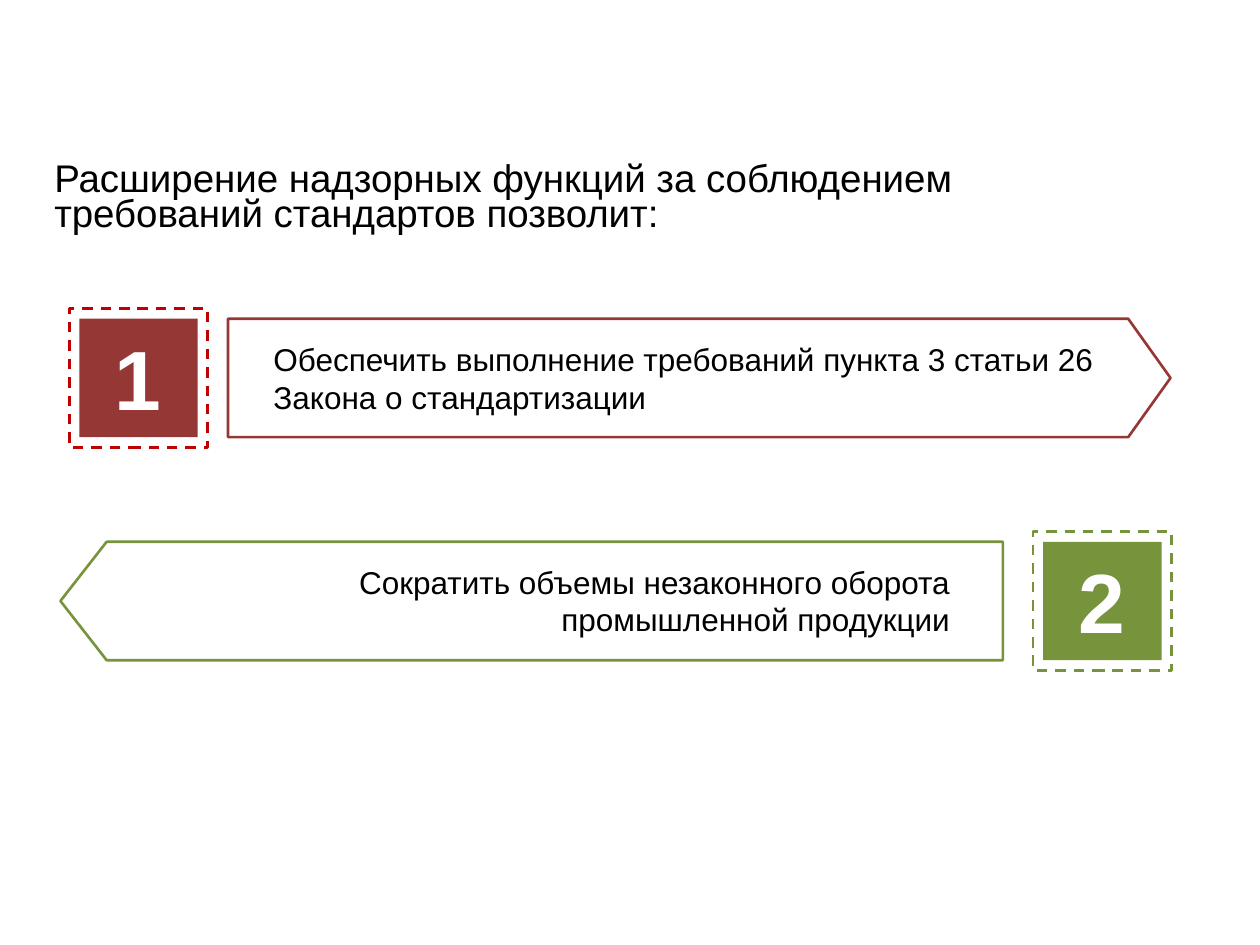
"""Builds a slide with two numbered arrow banners under a heading."""
from dataclasses import dataclass

from pptx import Presentation
from pptx.dml.color import RGBColor
from pptx.enum.dml import MSO_LINE
from pptx.enum.shapes import MSO_SHAPE
from pptx.enum.text import MSO_ANCHOR, PP_ALIGN
from pptx.shapes.autoshape import Shape
from pptx.shapes.group import GroupShape
from pptx.shapes.shapetree import SlideShapes
from pptx.text.text import TextFrame
from pptx.util import Pt


@dataclass(frozen=True)
class Theme:
    font: str = "Arial"
    ink: str = "000000"
    paper: str = "FFFFFF"
    red: str = "953735"
    bright_red: str = "C00000"
    green: str = "77933C"
    heading_size: float = 22
    heading_leading: float = 20
    number_size: float = 48
    body_size: float = 18
    outline: float = 1.5


@dataclass(frozen=True)
class Box:
    left: float
    top: float
    width: float
    height: float

    def lengths(self) -> tuple[Pt, Pt, Pt, Pt]:
        return Pt(self.left), Pt(self.top), Pt(self.width), Pt(self.height)

    def inset(self, dx: float, dy: float) -> "Box":
        return Box(self.left + dx, self.top + dy, self.width - 2 * dx, self.height - 2 * dy)


@dataclass(frozen=True)
class Banner:
    number: str
    statement: str
    color: str
    frame_color: str
    top: float
    frame_left: float
    arrow_left: float
    arrow_point: float
    text_left: float
    text_width: float
    align: PP_ALIGN
    points_left: bool = False


THEME = Theme()
FRAME_SIDE = 79.2
FRAME_GAP = 5.76
NUMBER_INSET = (22.3, 6.84)
ARROW_WIDTH = 538.56
TEXT_INSET = 8.4
TEXT_MARGIN = 3.6
HEADING_BOX = Box(31, 94.3, 677.5, 28)
HEADING = ("Расширение надзорных функций за соблюдением", "требований стандартов позволит:")
BANNERS = (
    Banner("1", "Обеспечить выполнение требований пункта 3 статьи 26 Закона о стандартизации",
           THEME.red, THEME.bright_red, 176.4, 39.6, 130.32, 0.357, 152.64, 493.2, PP_ALIGN.LEFT),
    Banner("2", "Сократить объемы незаконного оборота промышленной продукции",
           THEME.green, THEME.green, 303.84, 590.4, 34.56, 0.39, 69.84, 476.64, PP_ALIGN.RIGHT,
           points_left=True),
)


def add_outline(group: GroupShape, kind: MSO_SHAPE, box: Box,
                fill: str | None, line: str | None) -> Shape:
    """Draw a preset shape with an optional fill and outline."""
    shape = group.shapes.add_shape(kind, *box.lengths())
    shape.shadow.inherit = False
    if fill:
        shape.fill.solid()
        shape.fill.fore_color.rgb = RGBColor.from_string(fill)
    else:
        shape.fill.background()
    if line:
        shape.line.color.rgb = RGBColor.from_string(line)
        shape.line.width = Pt(THEME.outline)
    else:
        shape.line.fill.background()
    return shape


def add_text(shapes: SlideShapes, box: Box, lines: tuple[str, ...], size: float,
             color: str = THEME.ink, align: PP_ALIGN = PP_ALIGN.LEFT, bold: bool = False,
             margin: float = TEXT_MARGIN, wrap: bool = True) -> TextFrame:
    """Write one paragraph per line in a text box."""
    frame = shapes.add_textbox(*box.lengths()).text_frame
    frame.word_wrap = wrap
    frame.vertical_anchor = MSO_ANCHOR.TOP
    frame.margin_left = frame.margin_right = Pt(margin)
    frame.margin_top = frame.margin_bottom = Pt(margin)
    frame.text = "\n".join(lines)
    for paragraph in frame.paragraphs:
        paragraph.alignment = align
        paragraph.font.name = THEME.font
        paragraph.font.size = Pt(size)
        paragraph.font.bold = bold
        paragraph.font.color.rgb = RGBColor.from_string(color)
    return frame


def add_banner(shapes: SlideShapes, banner: Banner) -> None:
    """Draw a numbered tile with its arrow and statement."""
    group = shapes.add_group_shape()
    frame_box = Box(banner.frame_left, banner.top, FRAME_SIDE, FRAME_SIDE)
    tile_box = frame_box.inset(FRAME_GAP, FRAME_GAP)
    arrow_box = Box(banner.arrow_left, tile_box.top, ARROW_WIDTH, tile_box.height)
    text_box = Box(banner.text_left, tile_box.top, banner.text_width, tile_box.height)

    frame = add_outline(group, MSO_SHAPE.RECTANGLE, frame_box, None, banner.frame_color)
    frame.line.dash_style = MSO_LINE.DASH
    add_outline(group, MSO_SHAPE.RECTANGLE, tile_box, banner.color, None)
    add_text(group.shapes, frame_box.inset(*NUMBER_INSET), (banner.number,), THEME.number_size,
             THEME.paper, bold=True, wrap=False)
    arrow = add_outline(group, MSO_SHAPE.PENTAGON, arrow_box, THEME.paper, banner.color)
    arrow.adjustments[0] = banner.arrow_point
    if banner.points_left:
        arrow.element.spPr.xfrm.set("flipH", "1")
    add_text(group.shapes, text_box.inset(0, TEXT_INSET), (banner.statement,), THEME.body_size,
             align=banner.align)


def main() -> None:
    """Build and save the presentation."""
    presentation = Presentation()
    presentation.slide_width, presentation.slide_height = Pt(720), Pt(540)
    slide = presentation.slides.add_slide(presentation.slide_layouts[6])
    heading = add_text(slide.shapes, HEADING_BOX, HEADING, THEME.heading_size, margin=0)
    for paragraph in heading.paragraphs:
        paragraph.line_spacing = Pt(THEME.heading_leading)
    for banner in BANNERS:
        add_banner(slide.shapes, banner)
    presentation.save("out.pptx")


if __name__ == "__main__":
    main()
